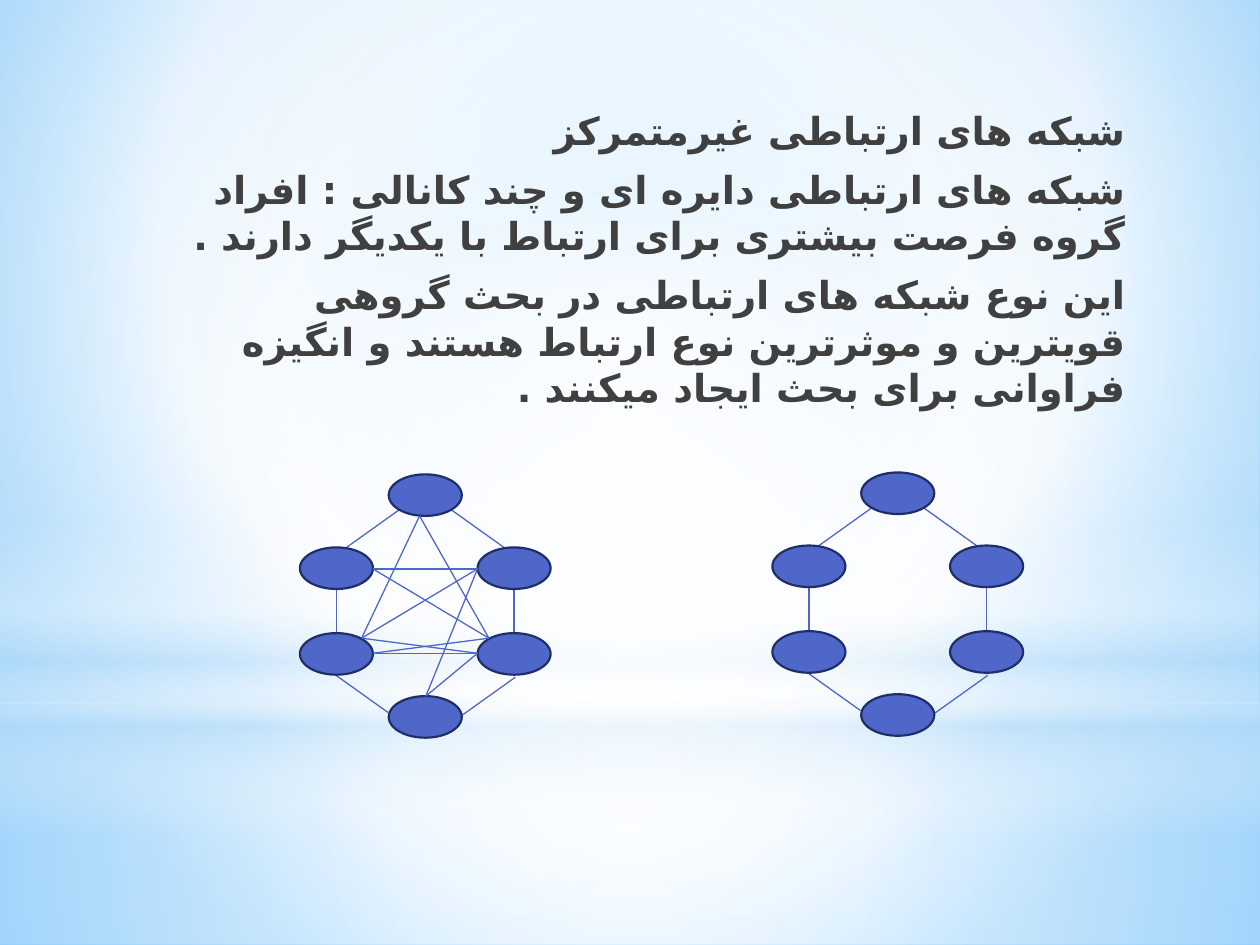
from typing import NamedTuple

from lxml.etree import SubElement
from pptx import Presentation
from pptx.dml.color import RGBColor
from pptx.enum.shapes import MSO_CONNECTOR, MSO_SHAPE
from pptx.enum.text import PP_ALIGN
from pptx.oxml.ns import qn
from pptx.util import Inches, Pt

COLORS = {
    "sky": "9ED5FF", "deep": "5BB9FF", "haze": "B4DCFA", "white": "FFFFFF",
    "node": "4E67C8", "edge": "1F2E69", "text": "404040",
}
FONT, PERSIAN_FONT = "Roboto", "DejaVu Sans"
WIDTH, HEIGHT = 10, 7.5
NODE_W, NODE_H = 0.58, 0.33
COLUMN = 0.705
ROWS = (0, 0.58, 1.26, 1.76)


class Stop(NamedTuple):
    place: int
    color: str
    alpha: int = 100


class Layer(NamedTuple):
    """A full-width band of light; top and height are shares of the slide."""
    shape: MSO_SHAPE
    top: float
    height: float
    stops: tuple[Stop, ...]
    center: tuple[int, ...] | None = (50, 50, 50, 50)


class Point(NamedTuple):
    x: float
    y: float


class Link(NamedTuple):
    start: Point
    end: Point


class Network(NamedTuple):
    origin: Point
    mesh: tuple[Link, ...] = ()


LAYERS = (
    Layer(MSO_SHAPE.RECTANGLE, 0.744, 0.256,
          (Stop(0, "white", 91), Stop(37, "white", 76), Stop(100, "haze", 79))),
    Layer(MSO_SHAPE.RECTANGLE, 0, 0.744,
          (Stop(0, "white", 89), Stop(48, "white", 62), Stop(100, "haze", 79))),
    Layer(MSO_SHAPE.RECTANGLE, 0.55, 0.333,
          (Stop(0, "white", 0), Stop(29, "white", 30), Stop(45, "haze", 40),
           Stop(55, "white", 26), Stop(65, "haze", 60), Stop(100, "white", 0)), None),
    Layer(MSO_SHAPE.OVAL, 0.233, 0.744, (Stop(0, "white"), Stop(56, "white", 0))),
)

PARAGRAPHS = (
    "شبکه های ارتباطی غیرمتمرکز",
    "شبکه های ارتباطی دایره ای و چند کانالی : افراد گروه فرصت بیشتری برای ارتباط با یکدیگر دارند .",
    "این نوع شبکه های ارتباطی در بحث گروهی قویترین و موثرترین نوع ارتباط هستند و انگیزه فراوانی برای بحث ایجاد میکنند .",
)

# Node places as (column, row)
NODES = ((1, 0), (0, 1), (2, 1), (0, 2), (2, 2), (1, 3))

# Link ends are offsets from the corner of a network
RING = (
    Link(Point(0.79, 0.28), Point(0.37, 0.58)),
    Link(Point(1.20, 0.28), Point(1.62, 0.58)),
    Link(Point(0.29, 0.92), Point(0.29, 1.25)),
    Link(Point(1.70, 0.92), Point(1.70, 1.25)),
    Link(Point(0.28, 1.59), Point(0.70, 1.89)),
    Link(Point(1.71, 1.61), Point(1.29, 1.91)),
)
TOP, BOTTOM = Point(0.95, 0.33), Point(1.0, 1.76)
UPPER_LEFT, UPPER_RIGHT = Point(0.58, 0.75), Point(1.41, 0.75)
LOWER_LEFT, LOWER_RIGHT = Point(0.58, 1.42), Point(1.41, 1.42)
LEFT_SHOULDER, RIGHT_SHOULDER = Point(0.49, 1.3), Point(1.5, 1.3)
MESH = (
    Link(LEFT_SHOULDER, TOP),
    Link(RIGHT_SHOULDER, TOP),
    Link(LOWER_LEFT, LOWER_RIGHT),
    Link(UPPER_LEFT, UPPER_RIGHT),
    Link(UPPER_LEFT, RIGHT_SHOULDER),
    Link(LEFT_SHOULDER, UPPER_RIGHT),
    Link(LEFT_SHOULDER, LOWER_RIGHT),
    Link(BOTTOM, LOWER_RIGHT),
    Link(RIGHT_SHOULDER, LOWER_LEFT),
    Link(BOTTOM, UPPER_RIGHT),
)
NETWORKS = (Network(Point(6.13, 3.75)), Network(Point(2.38, 3.765), MESH))


def rgb(name: str) -> RGBColor:
    return RGBColor.from_string(COLORS[name])


def set_gradient(owner, fill, stops: tuple[Stop, ...], center: tuple[int, ...] | None) -> None:
    """Fill with a circular gradient around center, or a vertical one without it."""
    fill.solid()
    fill.fore_color.rgb = rgb("white")
    solid = next(owner.iter(qn("a:solidFill")))
    gradient = solid.makeelement(qn("a:gradFill"), {"rotWithShape": "1"})
    solid.getparent().replace(solid, gradient)
    stop_list = SubElement(gradient, qn("a:gsLst"))
    for stop in stops:
        mark = SubElement(stop_list, qn("a:gs"), pos=str(stop.place * 1000))
        color = SubElement(mark, qn("a:srgbClr"), val=COLORS[stop.color])
        if stop.alpha < 100:
            SubElement(color, qn("a:alpha"), val=str(stop.alpha * 1000))
    if center is None:
        SubElement(gradient, qn("a:lin"), ang="5400000", scaled="0")
    else:
        circle = SubElement(gradient, qn("a:path"), {"path": "circle"})
        SubElement(circle, qn("a:fillToRect"),
                   {side: str(share * 1000) for side, share in zip("ltrb", center)})


def add_layer(page, layer: Layer) -> None:
    band = page.shapes.add_shape(layer.shape, 0, Inches(layer.top * HEIGHT),
                                 Inches(WIDTH), Inches(layer.height * HEIGHT))
    band.shadow.inherit = False
    band.line.fill.background()
    set_gradient(band._element, band.fill, layer.stops, layer.center)


def add_body(page) -> None:
    box = page.shapes.add_textbox(Inches(1.25), Inches(0.8), Inches(7.83), Inches(5.7))
    frame = box.text_frame
    frame.word_wrap = True
    for index, text in enumerate(PARAGRAPHS):
        para = frame.add_paragraph() if index else frame.paragraphs[0]
        para.alignment = PP_ALIGN.RIGHT
        para.space_before, para.space_after = Pt(4.4), Pt(3)
        props = para._p.get_or_add_pPr()
        props.set("rtl", "1")
        props.set("marL", str(Inches(0.05)))
        props.set("indent", "0")
        span = para.add_run()
        span.text = text
        span.font.name, span.font.size, span.font.bold = FONT, Pt(22), True
        span.font.color.rgb = rgb("text")
        span_props = span._r.get_or_add_rPr()
        span_props.set("lang", "fa-IR")
        SubElement(span_props, qn("a:cs"), typeface=PERSIAN_FONT)


def add_link(page, origin: Point, link: Link) -> None:
    ends = [Inches(base + offset) for end in link for base, offset in zip(origin, end)]
    line = page.shapes.add_connector(MSO_CONNECTOR.STRAIGHT, *ends)
    line.line.color.rgb = rgb("node")
    line.line.width = Pt(0.75)
    SubElement(line._element.spPr, qn("a:effectLst"))


def add_node(page, origin: Point, column: int, row: int) -> None:
    node = page.shapes.add_shape(
        MSO_SHAPE.FLOWCHART_CONNECTOR, Inches(origin.x + column * COLUMN),
        Inches(origin.y + ROWS[row]), Inches(NODE_W), Inches(NODE_H))
    node.shadow.inherit = False
    node.fill.solid()
    node.fill.fore_color.rgb = rgb("node")
    node.line.color.rgb = rgb("edge")
    node.line.width = Pt(1.25)


def add_network(page, network: Network) -> None:
    for link in RING:
        add_link(page, network.origin, link)
    for column, row in NODES:
        add_node(page, network.origin, column, row)
    for link in network.mesh:
        add_link(page, network.origin, link)


def main() -> None:
    deck = Presentation()
    deck.slide_width, deck.slide_height = Inches(WIDTH), Inches(HEIGHT)
    page = deck.slides.add_slide(deck.slide_layouts[6])
    set_gradient(page._element, page.background.fill,
                 (Stop(0, "sky"), Stop(60, "white"), Stop(100, "deep")), (20, 10, 20, 60))
    for layer in LAYERS:
        add_layer(page, layer)
    add_body(page)
    for network in NETWORKS:
        add_network(page, network)
    deck.save("out.pptx")


if __name__ == "__main__":
    main()
